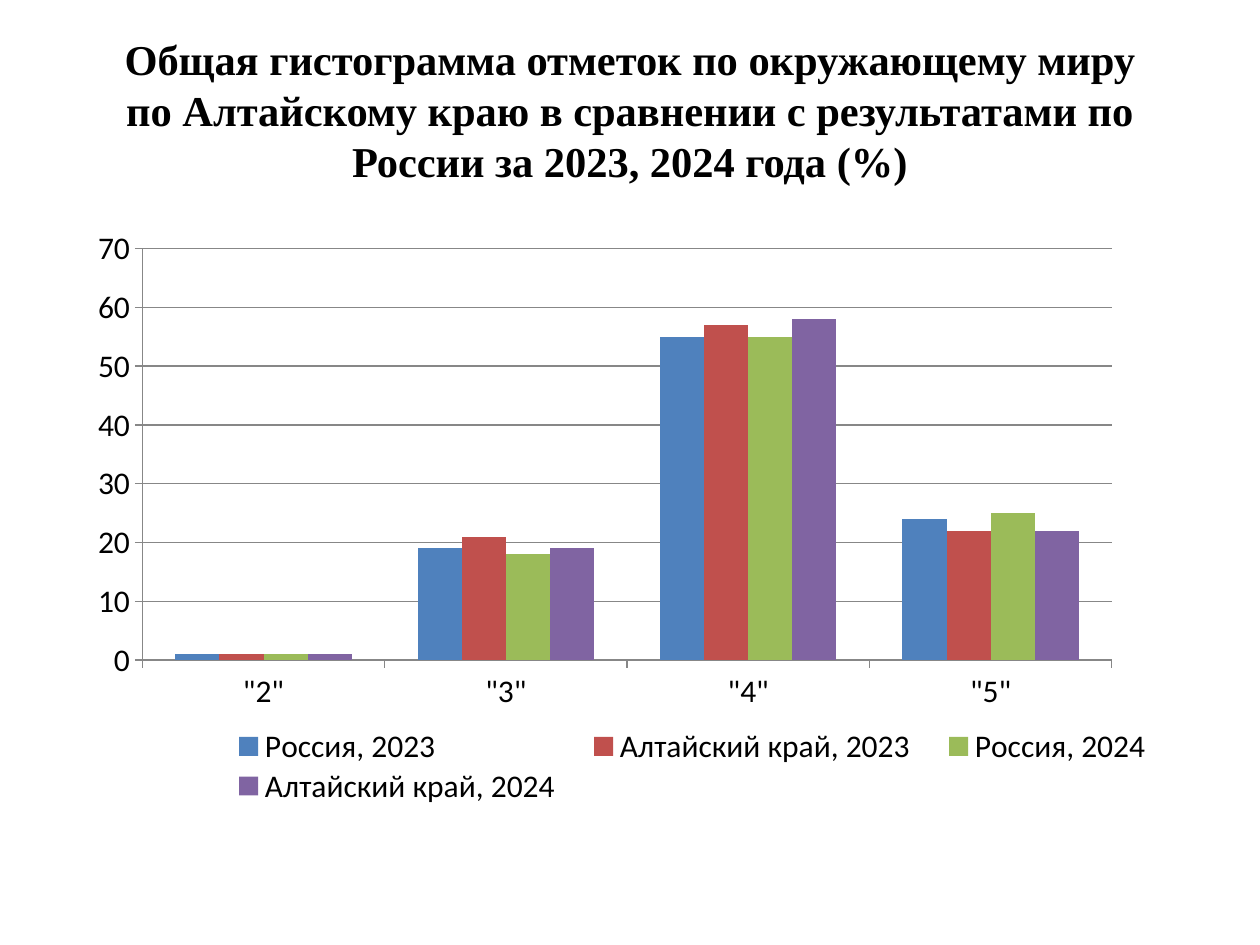
from dataclasses import dataclass

import pptx
import pptx.chart.data
import pptx.dml.color
import pptx.enum.chart
import pptx.enum.text
import pptx.oxml
import pptx.oxml.ns
import pptx.util

Pt = pptx.util.Pt
BLACK = "000000"
GRID_GRAY = "878787"
TITLE_LINES = (
    "Общая гистограмма отметок по окружающему миру",
    "по Алтайскому краю в сравнении с результатами по России за 2023, 2024 года (%)",
)
GRADES = ('"2"', '"3"', '"4"', '"5"')


@dataclass(frozen=True)
class Box:
    left: float
    top: float
    width: float
    height: float

    def lengths(self) -> tuple:
        return tuple(Pt(value) for value in (self.left, self.top, self.width, self.height))


@dataclass(frozen=True)
class Series:
    name: str
    shares: tuple
    color: str


SERIES = (
    Series("Россия, 2023", (1, 19, 55, 24), "4F81BD"),
    Series("Алтайский край, 2023", (1, 21, 57, 22), "C0504D"),
    Series("Россия, 2024", (1, 18, 55, 25), "9BBB59"),
    Series("Алтайский край, 2024", (1, 19, 58, 22), "8064A2"),
)


def rgb(color: str) -> pptx.dml.color.RGBColor:
    return pptx.dml.color.RGBColor.from_string(color)


def make_layout(box: Box, inner: bool = False):
    """Manual chart layout; the box holds fractions of the chart size."""
    target = '<c:layoutTarget val="inner"/>' if inner else ""
    return pptx.oxml.parse_xml(
        f'<c:layout {pptx.oxml.ns.nsdecls("c")}><c:manualLayout>{target}'
        '<c:xMode val="edge"/><c:yMode val="edge"/>'
        f'<c:x val="{box.left}"/><c:y val="{box.top}"/>'
        f'<c:w val="{box.width}"/><c:h val="{box.height}"/>'
        "</c:manualLayout></c:layout>"
    )


def replace_layout(parent, layout, position: int) -> None:
    for old_layout in parent.findall(pptx.oxml.ns.qn("c:layout")):
        parent.remove(old_layout)
    parent.insert(position, layout)


def add_title(slide, box: Box) -> None:
    frame = slide.shapes.add_textbox(*box.lengths()).text_frame
    frame.word_wrap = True
    frame.vertical_anchor = pptx.enum.text.MSO_ANCHOR.MIDDLE
    frame.margin_bottom = Pt(18)
    paragraph = frame.paragraphs[0]
    paragraph.alignment = pptx.enum.text.PP_ALIGN.CENTER
    paragraph.line_spacing = Pt(29.1)
    for index, line in enumerate(TITLE_LINES):
        if index:
            paragraph.add_line_break()
        run = paragraph.add_run()
        run.text = line
        run.font.name = "Times New Roman"
        run.font.size = Pt(24.3)
        run.font.bold = True
        run.font.color.rgb = rgb(BLACK)


def style_line(line) -> None:
    line.color.rgb = rgb(GRID_GRAY)
    line.width = Pt(0.75)


def add_grades_chart(slide, box: Box) -> None:
    chart_data = pptx.chart.data.CategoryChartData()
    chart_data.categories = GRADES
    for series in SERIES:
        chart_data.add_series(series.name, series.shares)
    chart = slide.shapes.add_chart(
        pptx.enum.chart.XL_CHART_TYPE.COLUMN_CLUSTERED, *box.lengths(), chart_data
    ).chart
    chart.has_title = False
    chart.font.name = "Calibri"
    chart.font.size = Pt(18)
    chart.font.color.rgb = rgb(BLACK)

    # Columns
    plot = chart.plots[0]
    plot.gap_width = 150
    plot.overlap = 0
    plot.vary_by_categories = False
    for column, series in zip(plot.series, SERIES):
        column.format.fill.solid()
        column.format.fill.fore_color.rgb = rgb(series.color)

    # Axes and gridlines
    for axis in (chart.category_axis, chart.value_axis):
        axis.major_tick_mark = pptx.enum.chart.XL_TICK_MARK.OUTSIDE
        axis.minor_tick_mark = pptx.enum.chart.XL_TICK_MARK.NONE
        style_line(axis.format.line)
    value_axis = chart.value_axis
    value_axis.minimum_scale = 0
    value_axis.maximum_scale = 70
    value_axis.major_unit = 10
    value_axis.has_major_gridlines = True
    style_line(value_axis.major_gridlines.format.line)

    # Legend and plot placement
    chart.has_legend = True
    legend = chart.legend
    legend.position = pptx.enum.chart.XL_LEGEND_POSITION.RIGHT
    legend.include_in_layout = False
    legend_element = chart.element.find(".//" + pptx.oxml.ns.qn("c:legend"))
    replace_layout(legend_element, make_layout(Box(0.13, 0.81, 0.85, 0.13)), 1)
    plot_area = chart.element.find(".//" + pptx.oxml.ns.qn("c:plotArea"))
    replace_layout(plot_area, make_layout(Box(0.07, 0.045, 0.855, 0.66), inner=True), 0)


def main() -> None:
    presentation = pptx.Presentation()
    presentation.slide_width = Pt(720)
    presentation.slide_height = Pt(540)
    slide = presentation.slides.add_slide(presentation.slide_layouts[6])
    add_title(slide, Box(36, 16.5, 648, 106.5))
    add_grades_chart(slide, Box(36, 126, 648, 356.4))
    presentation.save("out.pptx")


if __name__ == "__main__":
    main()
